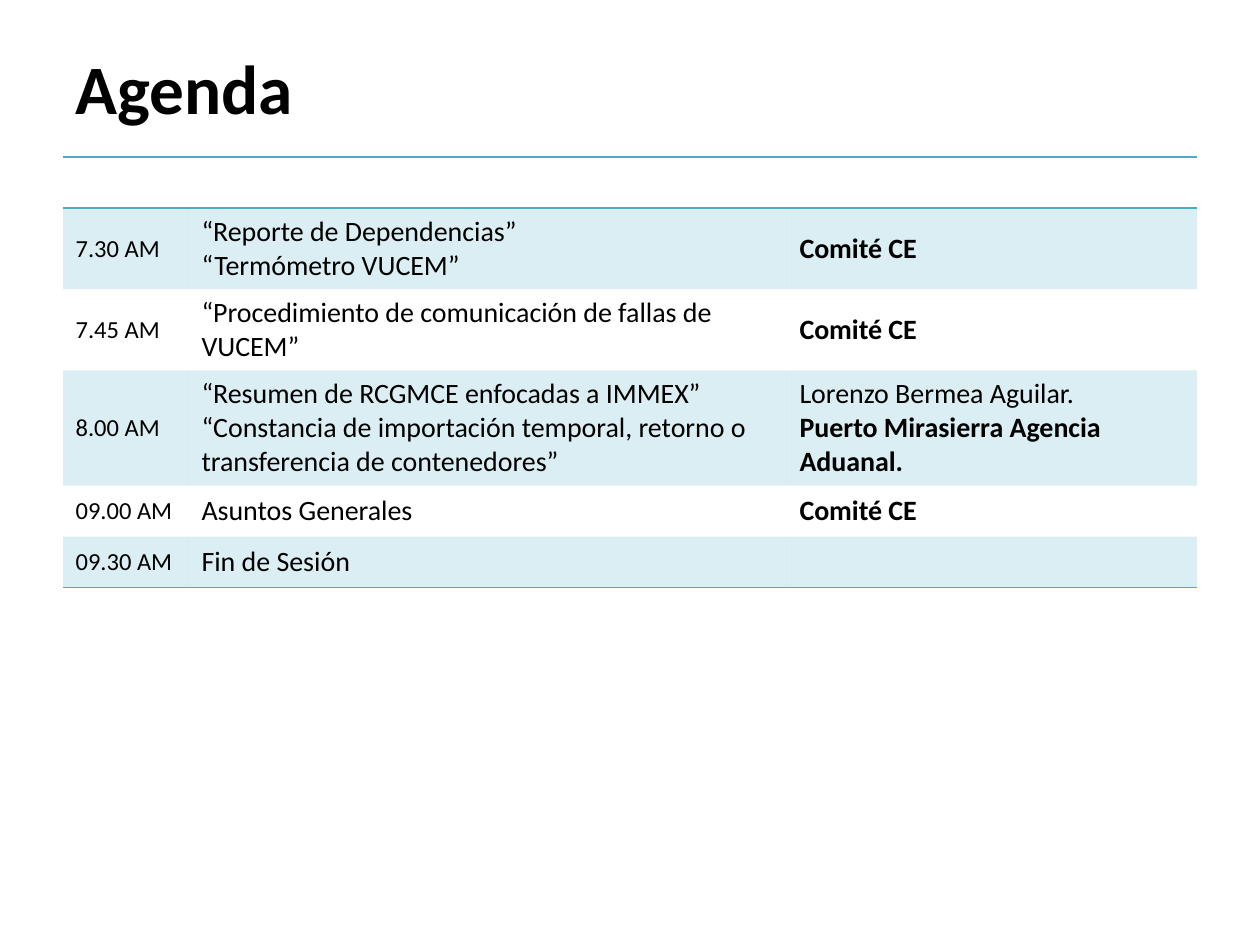
from dataclasses import dataclass

from pptx import Presentation
from pptx.dml.color import RGBColor as Rgb
from pptx.enum.text import MSO_ANCHOR as Anchor, PP_ALIGN as Align
from pptx.oxml import parse_xml
from pptx.oxml.ns import nsdecls, qn
from pptx.util import Pt

PX = 914400 // 126
NO_STYLE = "{2D5ABB26-0587-4C30-8999-92F81FD0307C}"


@dataclass(frozen=True)
class Theme:
    """Colours and type sizes of the agenda."""
    font: str = "Calibri"
    ink: str = "000000"
    paper: str = "FFFFFF"
    accent: str = "4BACC6"
    band_alpha: int = 20
    title_size: float = 39.6
    time_size: int = 14
    topic_size: int = 16
    rule_width: int = 1


THEME = Theme()
COLUMNS = (126, 598, 410)
HEADER_HEIGHT = 51
AGENDA = (
    (81, "7.30 AM", ("“Reporte de Dependencias”", "“Termómetro VUCEM”"), ("", "Comité CE")),
    (81, "7.45 AM", ("“Procedimiento de comunicación de fallas de VUCEM”",), ("", "Comité CE")),
    (115, "8.00 AM",
     ("“Resumen de RCGMCE enfocadas a IMMEX”",
      "“Constancia de importación temporal, retorno o transferencia de contenedores”"),
     ("Lorenzo Bermea Aguilar.", "Puerto Mirasierra Agencia Aduanal.")),
    (51, "09.00 AM", ("Asuntos Generales",), ("", "Comité CE")),
    (51, "09.30 AM", ("Fin de Sesión",), ("", "")),
)


def style_font(font, size, bold=None):
    """Apply the theme face and ink to a font."""
    font.name, font.size, font.bold = THEME.font, Pt(size), bold
    font.color.rgb = Rgb.from_string(THEME.ink)


def add_title(slide, text):
    """Place and format the slide title."""
    title = slide.shapes.title
    title.left, title.top, title.width, title.height = (n * PX for n in (63, 38, 1134, 98))
    title.fill.solid()
    title.fill.fore_color.rgb = Rgb.from_string(THEME.paper)
    title.text_frame.vertical_anchor = Anchor.MIDDLE
    heading = title.text_frame.paragraphs[0]
    heading.text = text
    heading.alignment = Align.LEFT
    style_font(heading.font, THEME.title_size, True)


def rule_cell(cell, sides):
    """Draw accent rules on the named sides of a cell."""
    for side in sides:
        cell._tc.get_or_add_tcPr().append(parse_xml(
            f'<a:ln{side} {nsdecls("a")} w="{Pt(THEME.rule_width)}"><a:solidFill>'
            f'<a:srgbClr val="{THEME.accent}"/></a:solidFill></a:ln{side}>'))


def band_cell(cell, banded):
    """Give a cell the translucent accent band, or no fill."""
    if not banded:
        cell.fill.background()
        return
    cell.fill.solid()
    cell.fill.fore_color.rgb = Rgb.from_string(THEME.accent)
    tint = cell._tc.tcPr.find(qn("a:solidFill")).find(qn("a:srgbClr"))
    tint.append(parse_xml(f'<a:alpha {nsdecls("a")} val="{THEME.band_alpha * 1000}"/>'))


def write_lines(cell, lines, size):
    """Write one paragraph per line."""
    cell.text = "\n".join(lines)
    for paragraph in cell.text_frame.paragraphs:
        style_font(paragraph.font, size)


def write_speaker(cell, person, organisation):
    """Write an optional person above the bold organisation."""
    paragraph = cell.text_frame.paragraphs[0]
    style_font(paragraph.font, THEME.topic_size)
    if person:
        paragraph.add_run().text = person
        paragraph.add_line_break()
    if organisation:
        run = paragraph.add_run()
        run.text = organisation
        run.font.bold = True


def add_agenda(slide):
    """Build the agenda table under an empty header row."""
    heights = [HEADER_HEIGHT] + [entry[0] for entry in AGENDA]
    frame = slide.shapes.add_table(len(heights), len(COLUMNS), 63 * PX, 157 * PX,
                                   sum(COLUMNS) * PX, sum(heights) * PX)
    table = frame.table
    table.first_row = table.horz_banding = False
    table._tbl.tblPr.find(qn("a:tableStyleId")).text = NO_STYLE
    for column, width in zip(table.columns, COLUMNS):
        column.width = width * PX
    for index, (row, height) in enumerate(zip(table.rows, heights)):
        row.height = height * PX
        sides = {0: "TB", len(AGENDA): "B"}.get(index, "")
        for cell in row.cells:
            cell.vertical_anchor = Anchor.MIDDLE
            rule_cell(cell, sides)
            band_cell(cell, index % 2 == 1)
    for index, (_, time, topics, speaker) in enumerate(AGENDA, 1):
        write_lines(table.cell(index, 0), [time], THEME.time_size)
        write_lines(table.cell(index, 1), topics, THEME.topic_size)
        write_speaker(table.cell(index, 2), *speaker)


def main():
    """Build and save the agenda slide."""
    deck = Presentation()
    deck.slide_width, deck.slide_height = 1260 * PX, 945 * PX
    slide = deck.slides.add_slide(deck.slide_layouts[5])
    add_title(slide, "Agenda")
    add_agenda(slide)
    deck.save("out.pptx")


if __name__ == "__main__":
    main()
